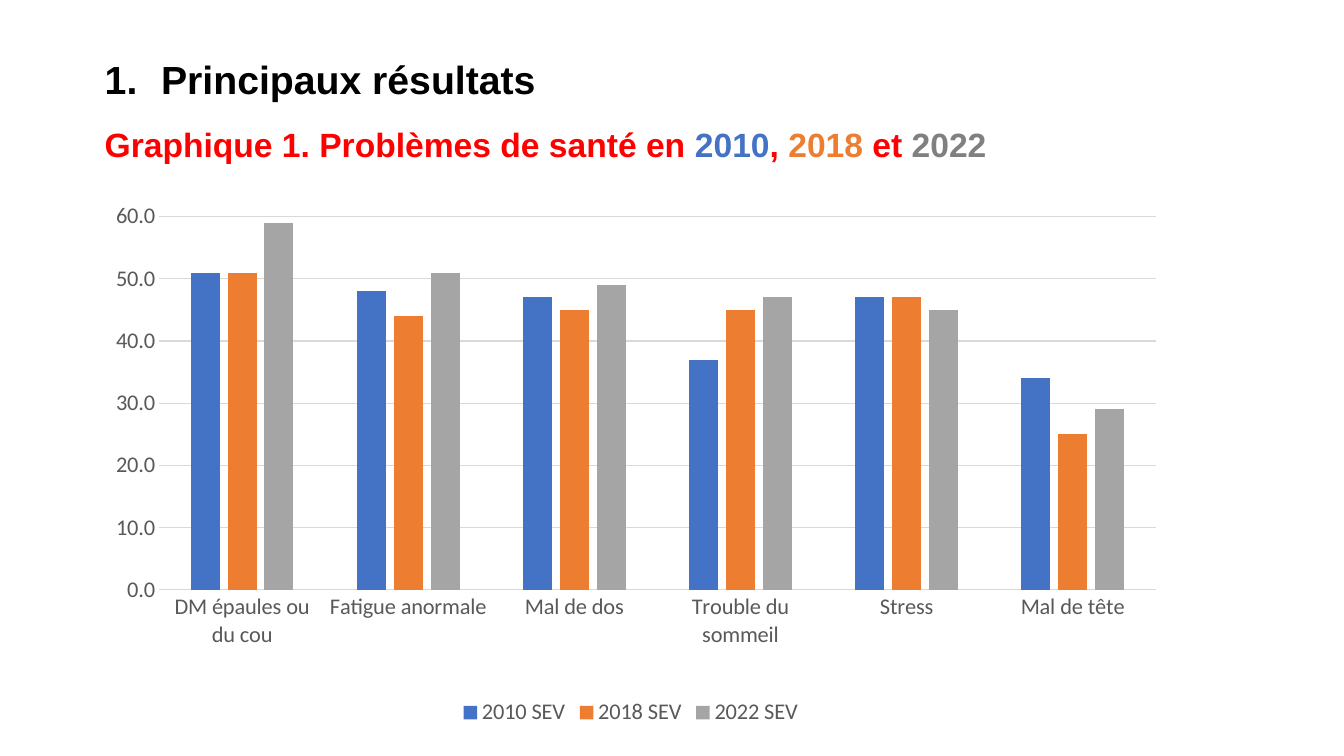
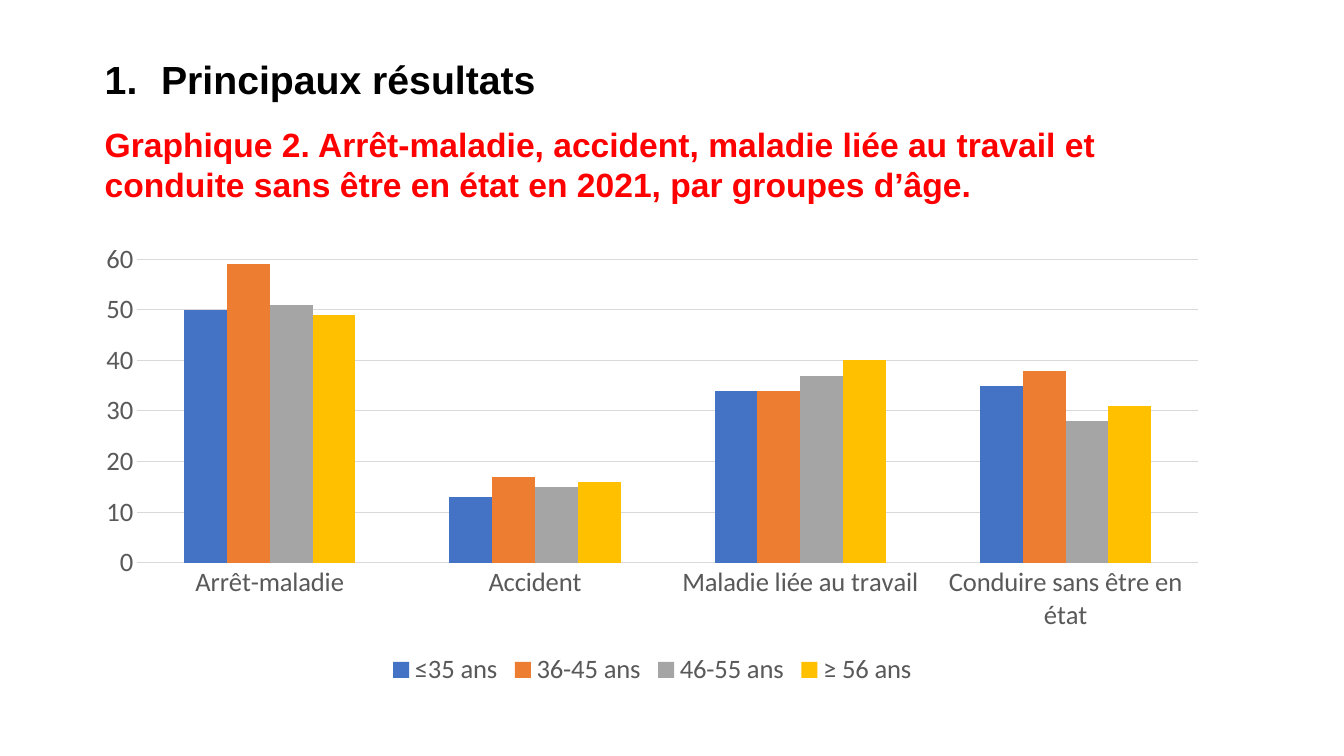
from lxml import etree
from pptx import Presentation
from pptx import util as u
from pptx.chart import data as cd
from pptx.dml.color import RGBColor
from pptx.enum import chart as ce
from pptx.oxml import parse_xml
from pptx.oxml import ns

HUES = {
    "black": "000000", "red": "FF0000", "blue": "4472C4", "orange": "ED7D31",
    "gray": "A5A5A5", "gold": "FFC000", "year": "808080",
    "text": "595959", "grid": "D9D9D9",
}
BARS = ["blue", "orange", "gray", "gold"]
HEAD = "Principaux résultats"

# Content: title runs, box places, chart data and format values
SLIDES = [
    {
        "title": [
            ("Graphique 1. Problèmes de santé en ", "red"), ("2010", "blue"),
            (", ", "red"), ("2018", "orange"), (" et ", "red"), ("2022", "year"),
        ],
        "high": 1.38,
        "at": (0.94, 1.88, 10.63, 5.37),
        "cats": ["DM épaules ou du cou", "Fatigue anormale", "Mal de dos",
                 "Trouble du sommeil", "Stress", "Mal de tête"],
        "rows": [
            ("2010 SEV", (51, 48, 47, 37, 47, 34)),
            ("2018 SEV", (51, 44, 45, 45, 47, 25)),
            ("2022 SEV", (59, 51, 49, 47, 45, 29)),
        ],
        "size": 16, "form": "0.0",
        "plot": {"gap_width": 219, "overlap": -27},
        "inner": {"x": 0.06, "y": 0.05, "w": 0.93, "h": 0.69},
    },
    {
        "title": [
            ("Graphique 2. Arrêt-maladie, accident, maladie liée au travail et "
             "conduite sans être en état en 2021, par groupes d’âge.", "red"),
        ],
        "high": 1.78,
        "at": (0.83, 2.32, 11.28, 4.54),
        "cats": ["Arrêt-maladie", "Accident", "Maladie liée au travail",
                 "Conduire sans être en état"],
        "rows": [
            ("≤35 ans", (50, 13, 34, 35)),
            ("36-45 ans", (59, 17, 34, 38)),
            ("46-55 ans", (51, 15, 37, 28)),
            ("≥ 56 ans", (49, 16, 40, 31)),
        ],
        "size": 19, "form": "0",
        "plot": {"gap_width": 219, "overlap": 0},
        "inner": None,
    },
]


def hue(name):
    return RGBColor.from_string(HUES[name])


def put(item, **vals):
    for key, val in vals.items():
        setattr(item, key, val)


def style(font, name, size, tint, bold=False):
    put(font, name=name, size=u.Pt(size), bold=bold)
    font.color.rgb = hue(tint)


def rule(line):
    line.color.rgb = hue("grid")
    line.width = u.Pt(0.75)


# Numbered heading with the chart title below
def add_head(slide, runs, high):
    box = slide.shapes.add_textbox(*map(u.Inches, (0.94, 0.5, 11.28, high)))
    frame = box.text_frame
    frame.word_wrap = True
    top = frame.paragraphs[0]
    props = top._p.get_or_add_pPr()
    props.set("marL", str(u.Inches(0.56)))
    props.set("indent", str(-u.Inches(0.56)))
    mark = etree.SubElement(props, ns.qn("a:buAutoNum"))
    mark.set("type", "arabicPeriod")
    run = top.add_run()
    run.text = HEAD
    style(run.font, "Arial", 28, "black", True)

    sub = frame.add_paragraph()
    sub.space_before = u.Pt(15)
    for words, tint in runs:
        run = sub.add_run()
        run.text = words
        style(run.font, "Arial", 24, tint, True)


# Fixed inner plot area, as shares of the chart
def set_plot(chart, inner):
    area = chart._chartSpace.chart.plotArea
    for old in area.findall(ns.qn("c:layout")):
        area.remove(old)
    modes = '<c:layoutTarget val="inner"/><c:xMode val="edge"/><c:yMode val="edge"/>'
    sides = "".join(f'<c:{key} val="{val}"/>' for key, val in inner.items())
    area.insert(0, parse_xml(
        f'<c:layout {ns.nsdecls("c")}><c:manualLayout>{modes}{sides}'
        "</c:manualLayout></c:layout>"))


def add_bars(slide, page):
    data = cd.CategoryChartData(number_format=page["form"])
    data.categories = page["cats"]
    for name, vals in page["rows"]:
        data.add_series(name, vals)
    chart = slide.shapes.add_chart(
        ce.XL_CHART_TYPE.COLUMN_CLUSTERED, *map(u.Inches, page["at"]), data).chart
    put(chart, has_title=False, has_legend=True)
    style(chart.font, "Calibri", page["size"], "text")
    put(chart.legend, position=ce.XL_LEGEND_POSITION.BOTTOM, include_in_layout=False)
    style(chart.legend.font, "Calibri", page["size"], "text")

    # Axes
    none = ce.XL_TICK_MARK.NONE
    for axis in (chart.category_axis, chart.value_axis):
        put(axis, major_tick_mark=none, minor_tick_mark=none)
        style(axis.tick_labels.font, "Calibri", page["size"], "text")
    rule(chart.category_axis.format.line)
    scale = chart.value_axis
    put(scale, minimum_scale=0, maximum_scale=60, major_unit=10,
        has_major_gridlines=True)
    put(scale.tick_labels, number_format=page["form"], number_format_is_linked=False)
    scale.format.line.fill.background()
    rule(scale.major_gridlines.format.line)

    # Bars
    plot = chart.plots[0]
    put(plot, vary_by_categories=False, **page["plot"])
    for row, tint in zip(plot.series, BARS):
        row.format.fill.solid()
        row.format.fill.fore_color.rgb = hue(tint)
    if page["inner"]:
        set_plot(chart, page["inner"])


def main():
    deck = Presentation()
    put(deck, slide_width=u.Inches(13.33), slide_height=u.Inches(7.5))
    for page in SLIDES:
        slide = deck.slides.add_slide(deck.slide_layouts[6])
        add_head(slide, page["title"], page["high"])
        add_bars(slide, page)
    deck.save("out.pptx")


if __name__ == "__main__":
    main()
